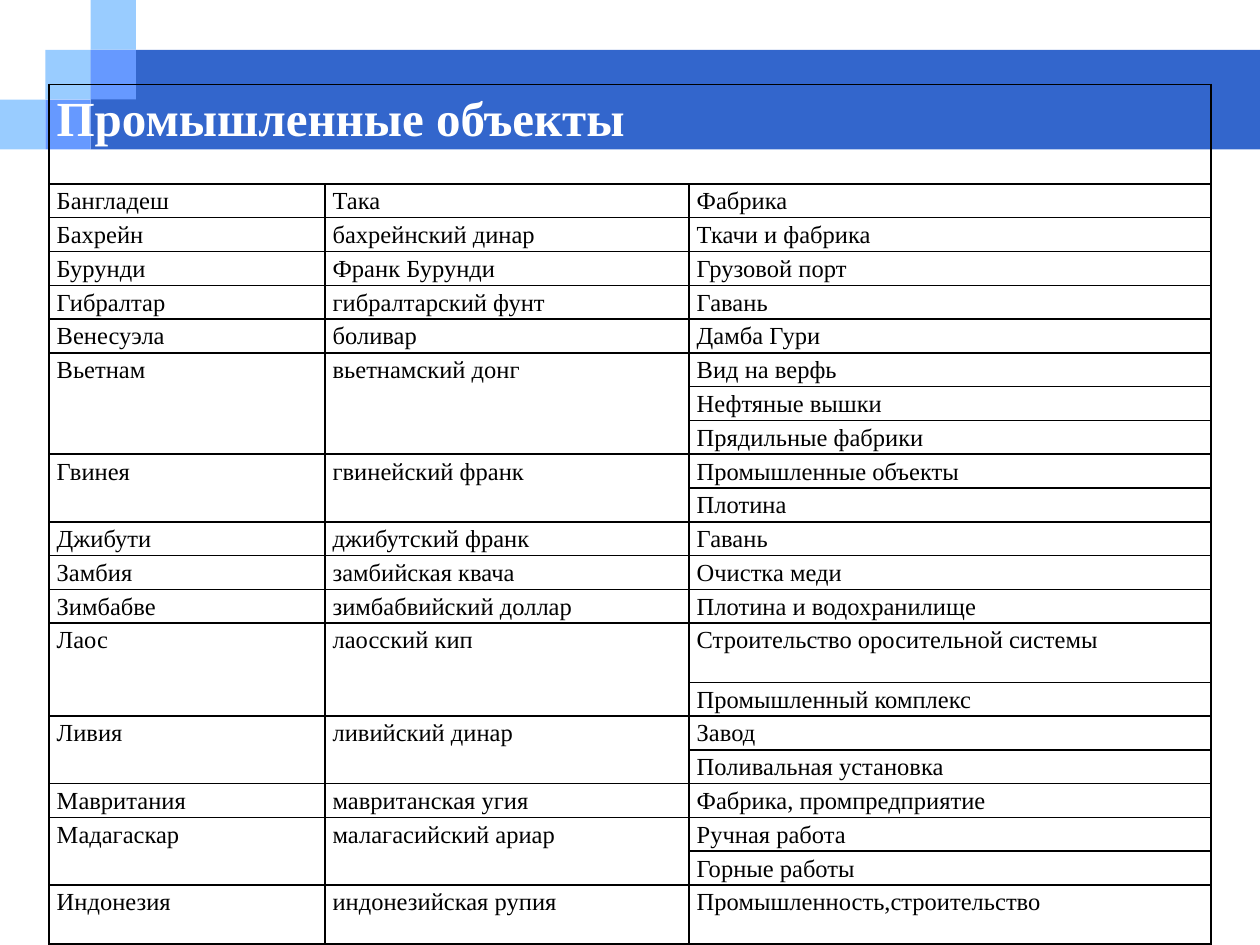
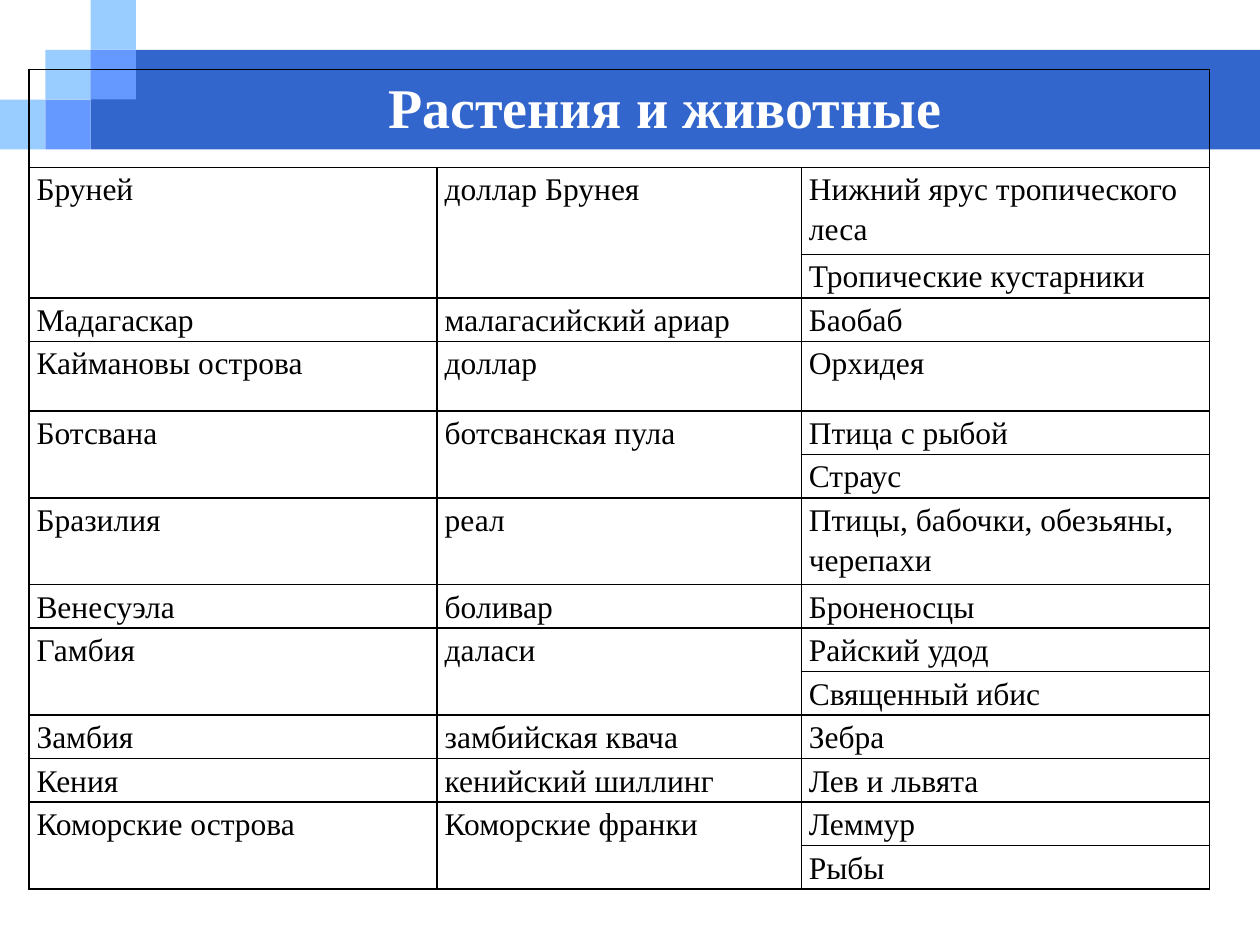
"""Build two slides with tables of industrial sites and of plants and animals."""
from typing import NamedTuple

from lxml.etree import SubElement
from pptx import Presentation
from pptx.dml.color import RGBColor
from pptx.enum.shapes import MSO_SHAPE
from pptx.oxml.ns import qn
from pptx.util import Inches, Pt

COLOURS = {
    "band": "3366CC",
    "light": "99CCFF",
    "middle": "6699FF",
    "title": "FFFFFF",
    "text": "000000",
    "border": "000000",
}
FONT = "Times New Roman"
SLIDE_WIDTH, SLIDE_HEIGHT = 10, 7.5
BAND_HEIGHT = 0.79
SQUARE_WIDTH, SQUARE_HEIGHT = 0.36, BAND_HEIGHT / 2
CELL_INSET = 0.06


class Square(NamedTuple):
    column: int
    row: int
    colour: str


class Country(NamedTuple):
    name: str
    currency: str
    subjects: tuple[str, ...]


class Topic(NamedTuple):
    title: str
    title_size: int
    title_inset: float
    text_size: int
    left: float
    top: float
    height: float
    column_widths: tuple[float, ...]
    tall_rows: dict[int, float]
    countries: tuple[Country, ...]


SQUARES = (
    Square(0, 2, "light"),
    Square(1, 1, "light"),
    Square(2, 0, "light"),
    Square(2, 1, "middle"),
    Square(1, 2, "middle"),
)

INDUSTRY = Topic(
    "Промышленные объекты", 28, CELL_INSET, 14, 0.39, 0.67, 6.83,
    (2.19, 2.89, 4.14), {0: 0.79, 14: 0.47, 21: 0.47},
    (
        Country("Бангладеш", "Така", ("Фабрика",)),
        Country("Бахрейн", "бахрейнский динар", ("Ткачи и фабрика",)),
        Country("Бурунди", "Франк Бурунди", ("Грузовой порт",)),
        Country("Гибралтар", "гибралтарский фунт", ("Гавань",)),
        Country("Венесуэла", "боливар", ("Дамба Гури",)),
        Country("Вьетнам", "вьетнамский донг",
                ("Вид на верфь", "Нефтяные вышки", "Прядильные фабрики")),
        Country("Гвинея", "гвинейский франк", ("Промышленные объекты", "Плотина")),
        Country("Джибути", "джибутский франк", ("Гавань",)),
        Country("Замбия", "замбийская квача", ("Очистка меди",)),
        Country("Зимбабве", "зимбабвийский доллар", ("Плотина и водохранилище",)),
        Country("Лаос", "лаосский кип",
                ("Строительство оросительной системы", "Промышленный комплекс")),
        Country("Ливия", "ливийский динар", ("Завод", "Поливальная установка")),
        Country("Мавритания", "мавританская угия", ("Фабрика, промпредприятие",)),
        Country("Мадагаскар", "малагасийский ариар", ("Ручная работа", "Горные работы")),
        Country("Индонезия", "индонезийская рупия", ("Промышленность,строительство",)),
    ),
)

NATURE = Topic(
    "Растения и животные", 32, 2.85, 18, 0.23, 0.55, 6.51,
    (3.24, 2.89, 3.24), {0: 0.78, 1: 0.69, 4: 0.55, 7: 0.69},
    (
        Country("Бруней", "доллар Брунея",
                ("Нижний ярус тропического леса", "Тропические кустарники")),
        Country("Мадагаскар", "малагасийский ариар", ("Баобаб",)),
        Country("Каймановы острова", "доллар", ("Орхидея",)),
        Country("Ботсвана", "ботсванская пула", ("Птица с рыбой", "Страус")),
        Country("Бразилия", "реал", ("Птицы, бабочки, обезьяны, черепахи",)),
        Country("Венесуэла", "боливар", ("Броненосцы",)),
        Country("Гамбия", "даласи", ("Райский удод", "Священный ибис")),
        Country("Замбия", "замбийская квача", ("Зебра",)),
        Country("Кения", "кенийский шиллинг", ("Лев и львята",)),
        Country("Коморские острова", "Коморские франки", ("Леммур", "Рыбы")),
    ),
)


def add_block(slide, left: float, top: float, width: float, height: float, colour: str) -> None:
    block = slide.shapes.add_shape(
        MSO_SHAPE.RECTANGLE, Inches(left), Inches(top), Inches(width), Inches(height))
    block.shadow.inherit = False
    block.fill.solid()
    block.fill.fore_color.rgb = RGBColor.from_string(COLOURS[colour])
    block.line.fill.background()


def add_header_band(slide) -> None:
    band_left = 2 * SQUARE_WIDTH
    add_block(slide, band_left, SQUARE_HEIGHT, SLIDE_WIDTH - band_left, BAND_HEIGHT, "band")
    for square in SQUARES:
        add_block(slide, square.column * SQUARE_WIDTH, square.row * SQUARE_HEIGHT,
                  SQUARE_WIDTH, SQUARE_HEIGHT, square.colour)


def style_cell(cell) -> None:
    cell.margin_left = cell.margin_right = Inches(CELL_INSET)
    cell.margin_top = cell.margin_bottom = 0
    properties = cell._tc.get_or_add_tcPr()
    for side in ("a:lnL", "a:lnR", "a:lnT", "a:lnB"):
        border = SubElement(properties, qn(side), w=str(Pt(1)))
        ink = SubElement(border, qn("a:solidFill"))
        SubElement(ink, qn("a:srgbClr"), val=COLOURS["border"])
    cell.fill.background()


def write_cell(cell, words: str, size: int, colour: str = "text", bold: bool = False) -> None:
    paragraph = cell.text_frame.paragraphs[0]
    paragraph.text = words
    paragraph.line_spacing = 1.15
    font = paragraph.runs[0].font
    font.name = FONT
    font.size = Pt(size)
    font.bold = bold
    font.color.rgb = RGBColor.from_string(COLOURS[colour])


def add_country_table(slide, topic: Topic) -> None:
    row_count = 1 + sum(len(country.subjects) for country in topic.countries)
    usual_height = (topic.height - sum(topic.tall_rows.values())) / (
        row_count - len(topic.tall_rows))
    table = slide.shapes.add_table(
        row_count, len(topic.column_widths), Inches(topic.left), Inches(topic.top),
        Inches(sum(topic.column_widths)), Inches(topic.height)).table
    table.first_row = table.horz_banding = False
    for column, width in zip(table.columns, topic.column_widths):
        column.width = Inches(width)
    for index, row in enumerate(table.rows):
        row.height = Inches(topic.tall_rows.get(index, usual_height))
        for cell in row.cells:
            style_cell(cell)

    heading = table.cell(0, 0)
    heading.merge(table.cell(0, len(topic.column_widths) - 1))
    heading.margin_left = Inches(topic.title_inset)
    write_cell(heading, topic.title, topic.title_size, "title", True)

    first = 1
    for country in topic.countries:
        last = first + len(country.subjects) - 1
        for column, words in enumerate((country.name, country.currency)):
            cell = table.cell(first, column)
            if last > first:
                cell.merge(table.cell(last, column))
            write_cell(cell, words, topic.text_size)
        for row, subject in enumerate(country.subjects, first):
            write_cell(table.cell(row, 2), subject, topic.text_size)
        first = last + 1


def main() -> None:
    presentation = Presentation()
    presentation.slide_width = Inches(SLIDE_WIDTH)
    presentation.slide_height = Inches(SLIDE_HEIGHT)
    for topic in (INDUSTRY, NATURE):
        slide = presentation.slides.add_slide(presentation.slide_layouts[6])
        add_header_band(slide)
        add_country_table(slide, topic)
    presentation.save("out.pptx")


if __name__ == "__main__":
    main()
